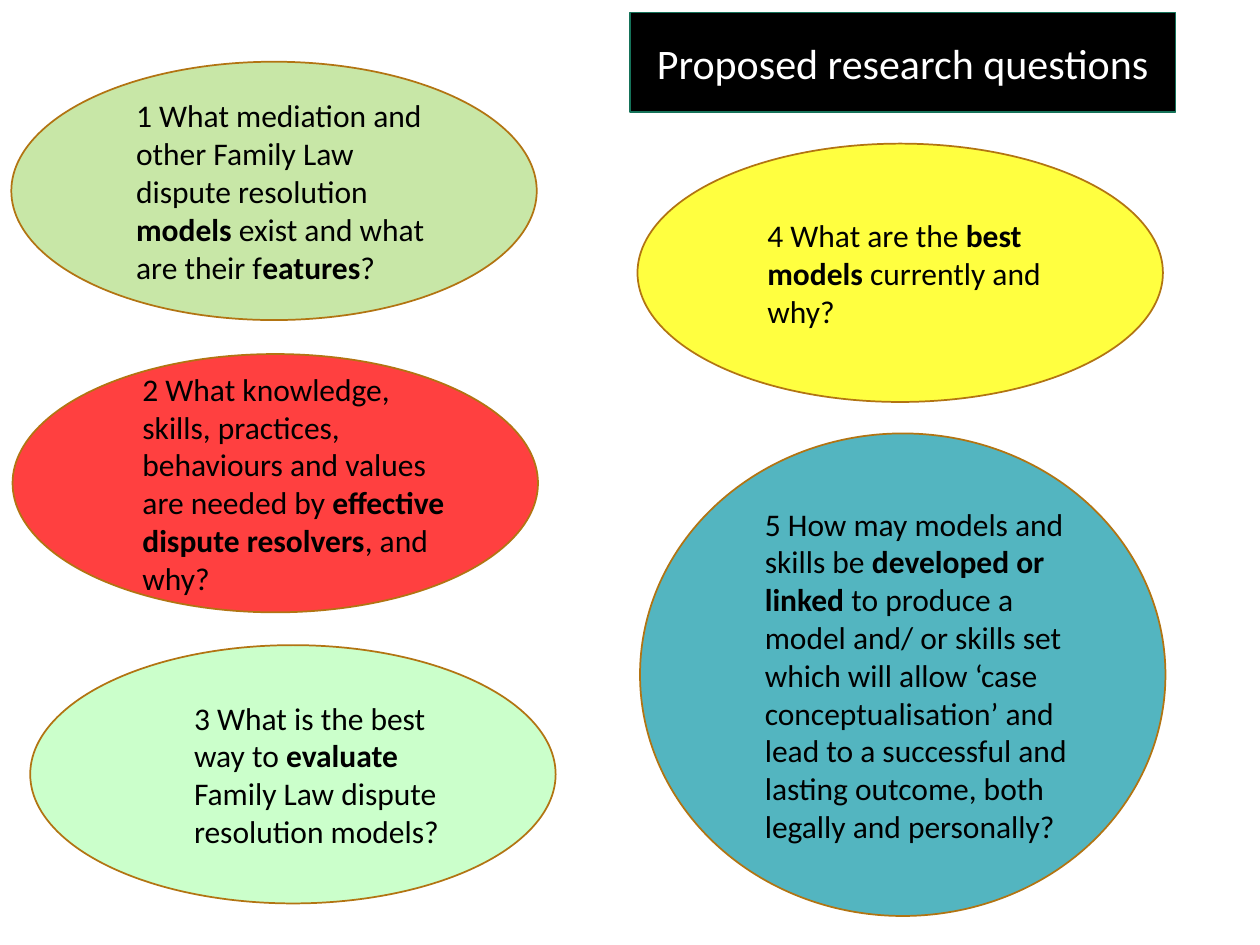
"""Build the slide of proposed research questions."""
from lxml.etree import SubElement
from pptx import Presentation
from pptx.dml.color import RGBColor
from pptx.enum.shapes import MSO_SHAPE as Shape
from pptx.enum.text import MSO_ANCHOR as Anchor, MSO_AUTO_SIZE as AutoSize, PP_ALIGN as Align
from pptx.oxml.ns import qn
from pptx.util import Inches, Pt

BLACK = RGBColor(0x00, 0x00, 0x00)
WHITE = RGBColor(0xFF, 0xFF, 0xFF)
DARK_GREEN = RGBColor(0x15, 0x72, 0x59)
BROWN = RGBColor(0xB2, 0x74, 0x12)
MINT = RGBColor(0x99, 0xFF, 0x99)
GREEN = RGBColor(0x92, 0xD0, 0x50)
RED = RGBColor(0xFF, 0x00, 0x00)
YELLOW = RGBColor(0xFF, 0xFF, 0x00)
TEAL = RGBColor(0x1A, 0x9D, 0xAC)

OVAL_WIDTH, OVAL_HEIGHT = 4.17, 2.05
USUAL_INSETS = (0.04, 0.05, 0.1, 0.05)


class QuestionSlide:
    """Hold the slide and its style, and draw the title and the questions."""

    font_name = "Calibri"
    title_size = Pt(24)
    question_size = Pt(18)
    line_width = Pt(1)
    indent = Inches(0.38)

    def __init__(self, slide):
        self.slide = slide

    def _outlined(self, kind, box, fill, line):
        shape = self.slide.shapes.add_shape(kind, *map(Inches, box))
        shape.shadow.inherit = False
        shape.fill.solid()
        shape.fill.fore_color.rgb = fill
        shape.line.color.rgb = line
        shape.line.width = self.line_width
        shape.text_frame.word_wrap = True
        shape.text_frame.vertical_anchor = Anchor.MIDDLE
        return shape

    def _run(self, paragraph, text, size, color, bold=False):
        run = paragraph.add_run()
        run.text = text
        run.font.name = self.font_name
        run.font.size = size
        run.font.color.rgb = color
        run.font.bold = bold

    def title(self, text, box):
        banner = self._outlined(Shape.RECTANGLE, box, BLACK, DARK_GREEN)
        heading = banner.text_frame.paragraphs[0]
        heading.alignment = Align.CENTER
        self._run(heading, text, self.title_size, WHITE)

    def question(self, parts, left, top, fill, opacity, height=OVAL_HEIGHT,
                 insets=USUAL_INSETS, grow=False):
        """Draw an oval whose text parts alternate between plain and bold."""
        oval = self._outlined(Shape.OVAL, (left, top, OVAL_WIDTH, height), fill, BROWN)
        color = oval.fill._xPr.find(qn("a:solidFill"))[0]
        SubElement(color, qn("a:alpha"), val=str(opacity * 1000))
        frame = oval.text_frame
        (frame.margin_left, frame.margin_top,
         frame.margin_right, frame.margin_bottom) = map(Inches, insets)
        if grow:
            frame.auto_size = AutoSize.SHAPE_TO_FIT_TEXT
        wording = frame.paragraphs[0]
        wording.alignment = Align.LEFT
        wording.level = 1
        properties = wording._p.get_or_add_pPr()
        properties.set("marL", str(self.indent))
        properties.set("indent", "0")
        for position, part in enumerate(parts):
            self._run(wording, part, self.question_size, BLACK, bold=position % 2 == 1)


def main():
    deck = Presentation()
    deck.slide_width, deck.slide_height = Inches(10), Inches(7.5)
    page = QuestionSlide(deck.slides.add_slide(deck.slide_layouts[6]))

    page.title("Proposed research questions", (5, 0.1, 4.33, 0.79))
    page.question(
        ["3 What is the best way to ", "evaluate ", "Family Law dispute resolution models?"],
        0.24, 5.12, MINT, 50, insets=(0.31, 0.05, 0.1, 0.05))
    page.question(
        ["1 What mediation and other Family Law dispute resolution ", "models",
         " exist and what are their f", "eatures", "?"],
        0.09, 0.49, GREEN, 50, insets=(0, 0.05, 0.1, 0.05))
    page.question(
        ["2 What knowledge, skills, practices, behaviours and values are needed by ",
         "effective dispute resolvers", ", and why?"],
        0.1, 2.81, RED, 75)
    page.question(
        ["4 What are the ", "best models ", "currently and why?"],
        5.06, 1.14, YELLOW, 75)
    page.question(
        ["5 How may models and skills be ", "developed or linked",
         " to produce a model and/ or skills set which will allow ‘case conceptualisation’ "
         "and lead to a successful and lasting outcome, both legally and personally?"],
        5.08, 3.44, TEAL, 75, height=3.83, insets=(0, 0, 0, 0), grow=True)

    deck.save("out.pptx")


if __name__ == "__main__":
    main()
